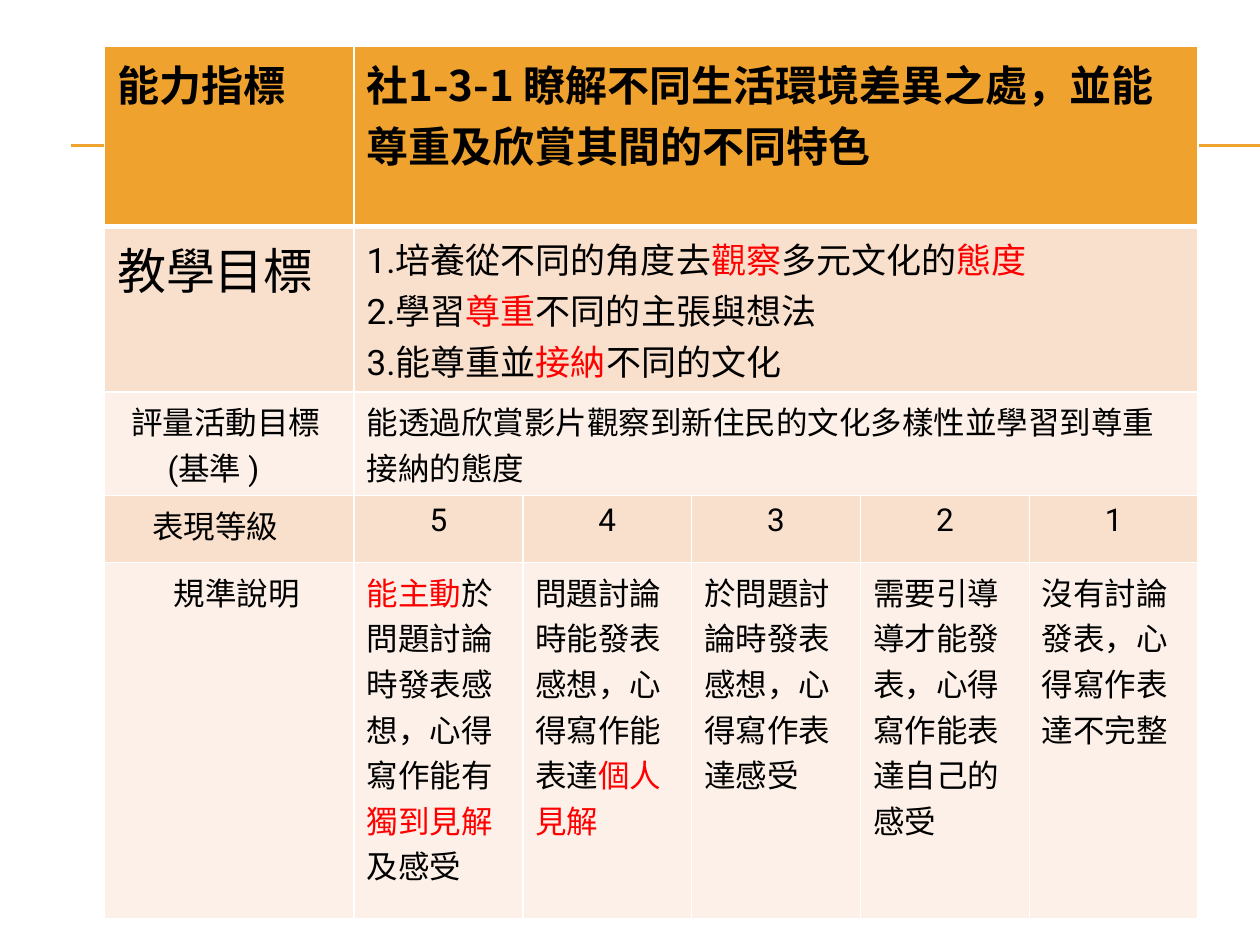
import pptx
import pptx.dml.color
import pptx.enum.shapes
import pptx.enum.text
import pptx.oxml
import pptx.oxml.ns
import pptx.util
from pptx.util import Inches

COLORS = {"accent": "F0A22E", "band": "F9E0CD", "pale": "FCF0E8",
          "border": "FFFFFF", "text": "000000", "highlight": "FF0000"}
CJK_FONT, LATIN_FONT = "Noto Sans CJK SC", "Roboto"
COLUMN_WIDTHS = [1.98] + [1.34] * 5

# Paragraphs are separated by line ends; text between asterisks is highlighted.
# Each row: height, fill, label size, label indents, body size, label, body cells
ROWS = [
    (1.43, "accent", 24, [0], 24, "能力指標",
     ["社1-3-1 瞭解不同生活環境差異之處，並能尊重及欣賞其間的不同特色"]),
    (1.15, "band", 28, [0], 20, "教學目標",
     ["1.培養從不同的角度去*觀察*多元文化的*態度*\n"
      "2.學習*尊重*不同的主張與想法\n"
      "3.能尊重並*接納*不同的文化"]),
    (0.75, "pale", 18, [0.11, 0.4], 18, "評量活動目標\n(基準 )",
     ["能透過欣賞影片觀察到新住民的文化多樣性並學習到尊重接納的態度"]),
    (0.53, "band", 18, [0.28], 18, "表現等級", ["5", "4", "3", "2", "1"]),
    (2.83, "pale", 18, [0.45], 18, "規準說明",
     ["*能主動*於問題討論時發表感想，心得寫作能有*獨到見解*及感受",
      "問題討論時能發表感想，心得寫作能表達*個人見解*",
      "於問題討論時發表感想，心得寫作表達感受",
      "需要引導導才能發表，心得寫作能表達自己的感受",
      "沒有討論發表，心得寫作表達不完整"]),
]


def rgb(name):
    return pptx.dml.color.RGBColor.from_string(COLORS[name])


def add_rule(page, y):
    rule = page.shapes.add_connector(
        pptx.enum.shapes.MSO_CONNECTOR.STRAIGHT,
        Inches(0.56), Inches(y), Inches(10), Inches(y))
    rule.line.color.rgb = rgb("accent")
    rule.line.width = pptx.util.Pt(0.75)
    rule._element.spPr.append(pptx.oxml.parse_xml(
        f'<a:effectLst {pptx.oxml.ns.nsdecls("a")}/>'))


def set_borders(cell, row_index):
    """Draw white borders, thicker between the heading row and the body."""
    widths = {"lnL": 1, "lnR": 1, "lnT": 3 if row_index == 1 else 1,
              "lnB": 3 if row_index == 0 else 1}
    properties = cell._tc.get_or_add_tcPr()
    for position, (side, width) in enumerate(widths.items()):
        properties.insert(position, pptx.oxml.parse_xml(
            f'<a:{side} {pptx.oxml.ns.nsdecls("a")} w="{width * 12700}">'
            f'<a:solidFill><a:srgbClr val="{COLORS["border"]}"/></a:solidFill>'
            f'</a:{side}>'))


def write_cell(cell, text, size, heading, indents=(0,), centered=False):
    frame = cell.text_frame
    frame.text = text.replace("*", "")
    lines = text.split("\n")
    for index, (para, line) in enumerate(zip(frame.paragraphs, lines)):
        para.text = ""
        if indents[index % len(indents)]:
            properties = para._p.get_or_add_pPr()
            properties.set("marL", str(Inches(indents[index])))
            properties.set("indent", "0")
        if centered:
            para.alignment = pptx.enum.text.PP_ALIGN.CENTER
        for part, words in enumerate(line.split("*")):
            if not words:
                continue
            span = para.add_run()
            span.text = words
            span.font.size = pptx.util.Pt(size)
            span.font.bold = heading
            span.font.name = CJK_FONT if heading else LATIN_FONT
            span.font.color.rgb = rgb("highlight" if part % 2 else "text")
            span.font._element.find(pptx.oxml.ns.qn("a:latin")).addnext(
                pptx.oxml.parse_xml(f'<a:ea {pptx.oxml.ns.nsdecls("a")} '
                                    f'typeface="{CJK_FONT}"/>'))


def add_rubric(page):
    heights = [row[0] for row in ROWS]
    table = page.shapes.add_table(
        len(ROWS), len(COLUMN_WIDTHS), Inches(0.83), Inches(0.37),
        Inches(sum(COLUMN_WIDTHS)), Inches(sum(heights))).table
    for column, width in zip(table.columns, COLUMN_WIDTHS):
        column.width = Inches(width)
    for index, row in enumerate(ROWS):
        height, fill, label_size, indents, size, label, bodies = row
        table.rows[index].height = Inches(height)
        for cell in table.rows[index].cells:
            cell.fill.solid()
            cell.fill.fore_color.rgb = rgb(fill)
            set_borders(cell, index)
        if len(bodies) == 1:
            table.cell(index, 1).merge(table.cell(index, len(COLUMN_WIDTHS) - 1))
        heading = index == 0
        write_cell(table.cell(index, 0), label, label_size, heading, indents)
        for column, body in enumerate(bodies, start=1):
            write_cell(table.cell(index, column), body, size, heading,
                       centered=body.isdigit())


def main():
    deck = pptx.Presentation()
    deck.slide_width, deck.slide_height = Inches(10), Inches(7.5)
    page = deck.slides.add_slide(deck.slide_layouts[6])
    for y in (1.15, 1.16):
        add_rule(page, y)
    add_rubric(page)
    deck.save("out.pptx")


if __name__ == "__main__":
    main()
